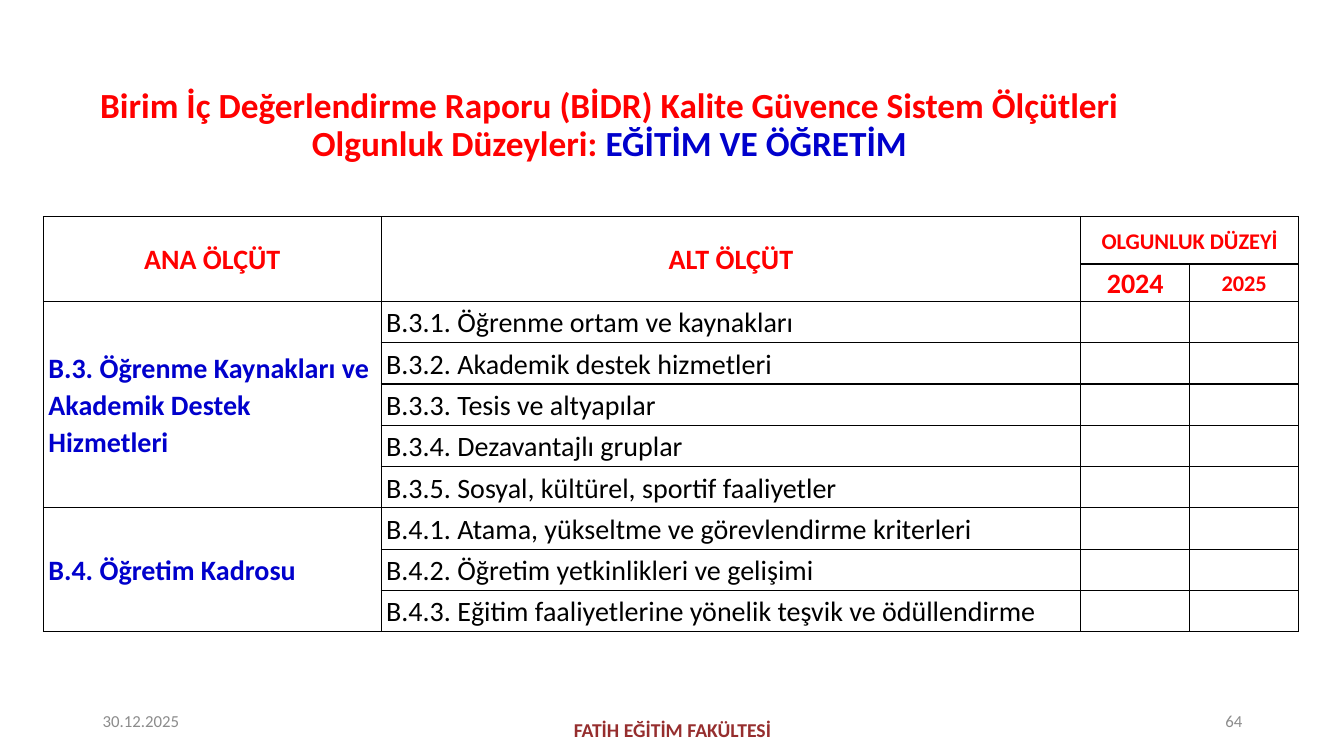
from dataclasses import dataclass

from lxml import etree
from pptx import Presentation
from pptx import util as u
from pptx.dml.color import RGBColor
from pptx.enum import text
from pptx.oxml.ns import qn

COLORS = {"red": "FF0000", "blue": "0000CC", "black": "000000",
          "gray": "8C8C8C", "maroon": "962E2E"}
FONT = "Calibri"
CENTER, LEFT = text.PP_ALIGN.CENTER, text.PP_ALIGN.LEFT
RIGHT, JUSTIFY = text.PP_ALIGN.RIGHT, text.PP_ALIGN.JUSTIFY


@dataclass
class Style:
    size: float
    color: str
    bold: bool = False
    align: text.PP_ALIGN = LEFT
    spacing: float = 1.0


@dataclass
class Label:
    wording: str
    left: float
    top: float
    width: float
    style: Style


@dataclass
class Criterion:
    name: str
    subcriteria: list[str]


HEADER = Style(20, "red", True, CENTER, 1.07)
SMALL_HEADER = Style(16, "red", True, CENTER, 1.07)
MAIN = Style(20, "blue", True, LEFT, 1.07)
SUB = Style(20, "black", False, JUSTIFY, 1.07)

LABELS = [
    Label("FATİH EĞİTİM FAKÜLTESİ", 4.42, 7.04, 4.5, Style(14, "maroon", True, CENTER)),
    Label("30.12.2025", 0.92, 6.95, 3, Style(12, "gray")),
    Label("64", 9.42, 6.95, 3, Style(12, "gray", align=RIGHT)),
]
TITLE_PARTS = [
    ("Birim İç Değerlendirme Raporu (BİDR) Kalite Güvence Sistem Ölçütleri "
     "Olgunluk Düzeyleri: ", "red"),
    ("EĞİTİM VE ÖĞRETİM", "blue"),
]
CRITERIA = [
    Criterion("B.3. Öğrenme Kaynakları ve Akademik Destek Hizmetleri", [
        "B.3.1. Öğrenme ortam ve kaynakları",
        "B.3.2. Akademik destek hizmetleri",
        "B.3.3. Tesis ve altyapılar",
        "B.3.4. Dezavantajlı gruplar",
        "B.3.5. Sosyal, kültürel, sportif faaliyetler",
    ]),
    Criterion("B.4. Öğretim Kadrosu", [
        "B.4.1. Atama, yükseltme ve görevlendirme kriterleri",
        "B.4.2. Öğretim yetkinlikleri ve gelişimi",
        "B.4.3. Eğitim faaliyetlerine yönelik teşvik ve ödüllendirme",
    ]),
]
COLUMN_WIDTHS = [3.35, 6.94, 1.08, 1.08]
HEADER_HEIGHTS = [0.47, 0.37]
ROW_HEIGHT = 0.41


def format_run(run, style: Style) -> None:
    run.font.name = FONT
    run.font.size = u.Pt(style.size)
    run.font.bold = style.bold
    run.font.color.rgb = RGBColor.from_string(COLORS[style.color])


def write(frame, wording: str, style: Style) -> None:
    frame.text = wording
    paragraph = frame.paragraphs[0]
    paragraph.alignment = style.align
    paragraph.line_spacing = style.spacing
    format_run(paragraph.runs[0], style)


def add_label(slide, label: Label) -> None:
    box = slide.shapes.add_textbox(u.Inches(label.left), u.Inches(label.top),
                                   u.Inches(label.width), u.Inches(0.4))
    box.text_frame.word_wrap = True
    box.text_frame.vertical_anchor = text.MSO_ANCHOR.MIDDLE
    write(box.text_frame, label.wording, label.style)


def format_title(title) -> None:
    title.left, title.top = u.Inches(0.43), u.Inches(0.9)
    title.width, title.height = u.Inches(11.23), u.Inches(0.7)
    frame = title.text_frame
    frame.auto_size = text.MSO_AUTO_SIZE.NONE
    frame.vertical_anchor = text.MSO_ANCHOR.MIDDLE
    paragraph = frame.paragraphs[0]
    paragraph.alignment = CENTER
    paragraph.line_spacing = 0.9
    for wording, color in TITLE_PARTS:
        run = paragraph.add_run()
        run.text = wording
        format_run(run, Style(25.2, color, True))


def format_cell(cell) -> None:
    cell.margin_left = cell.margin_right = u.Inches(0.05)
    cell.margin_top = cell.margin_bottom = 0
    cell.vertical_anchor = text.MSO_ANCHOR.MIDDLE
    properties = cell._tc.get_or_add_tcPr()
    for side in ("lnL", "lnR", "lnT", "lnB"):
        line = etree.SubElement(properties, qn(f"a:{side}"), w=str(u.Pt(1)))
        fill = etree.SubElement(line, qn("a:solidFill"))
        etree.SubElement(fill, qn("a:srgbClr"), val=COLORS["black"])
    cell.fill.background()


def add_criteria_table(slide) -> None:
    heights = HEADER_HEIGHTS + [ROW_HEIGHT] * sum(len(c.subcriteria) for c in CRITERIA)
    table = slide.shapes.add_table(
        len(heights), len(COLUMN_WIDTHS), u.Inches(0.43), u.Inches(2.15),
        u.Inches(sum(COLUMN_WIDTHS)), u.Inches(sum(heights))).table
    table.first_row = table.horz_banding = False
    for column, width in zip(table.columns, COLUMN_WIDTHS):
        column.width = u.Inches(width)
    for row, height in zip(table.rows, heights):
        row.height = u.Inches(height)
    for cell in table.iter_cells():
        format_cell(cell)

    # Two-row header
    for column, heading in enumerate(["ANA ÖLÇÜT", "ALT ÖLÇÜT"]):
        table.cell(0, column).merge(table.cell(1, column))
        write(table.cell(0, column).text_frame, heading, HEADER)
    table.cell(0, 2).merge(table.cell(0, 3))
    write(table.cell(0, 2).text_frame, "OLGUNLUK DÜZEYİ", SMALL_HEADER)
    write(table.cell(1, 2).text_frame, "2024", HEADER)
    write(table.cell(1, 3).text_frame, "2025", SMALL_HEADER)

    # Main criteria span their subcriteria
    first = len(HEADER_HEIGHTS)
    for criterion in CRITERIA:
        last = first + len(criterion.subcriteria) - 1
        table.cell(first, 0).merge(table.cell(last, 0))
        write(table.cell(first, 0).text_frame, criterion.name, MAIN)
        for row, subcriterion in enumerate(criterion.subcriteria, first):
            write(table.cell(row, 1).text_frame, subcriterion, SUB)
        first = last + 1


def main() -> None:
    presentation = Presentation()
    presentation.slide_width = u.Inches(13.33)
    presentation.slide_height = u.Inches(7.5)
    slide = presentation.slides.add_slide(presentation.slide_layouts[5])
    format_title(slide.shapes.title)
    for label in LABELS:
        add_label(slide, label)
    add_criteria_table(slide)
    presentation.save("out.pptx")


if __name__ == "__main__":
    main()
